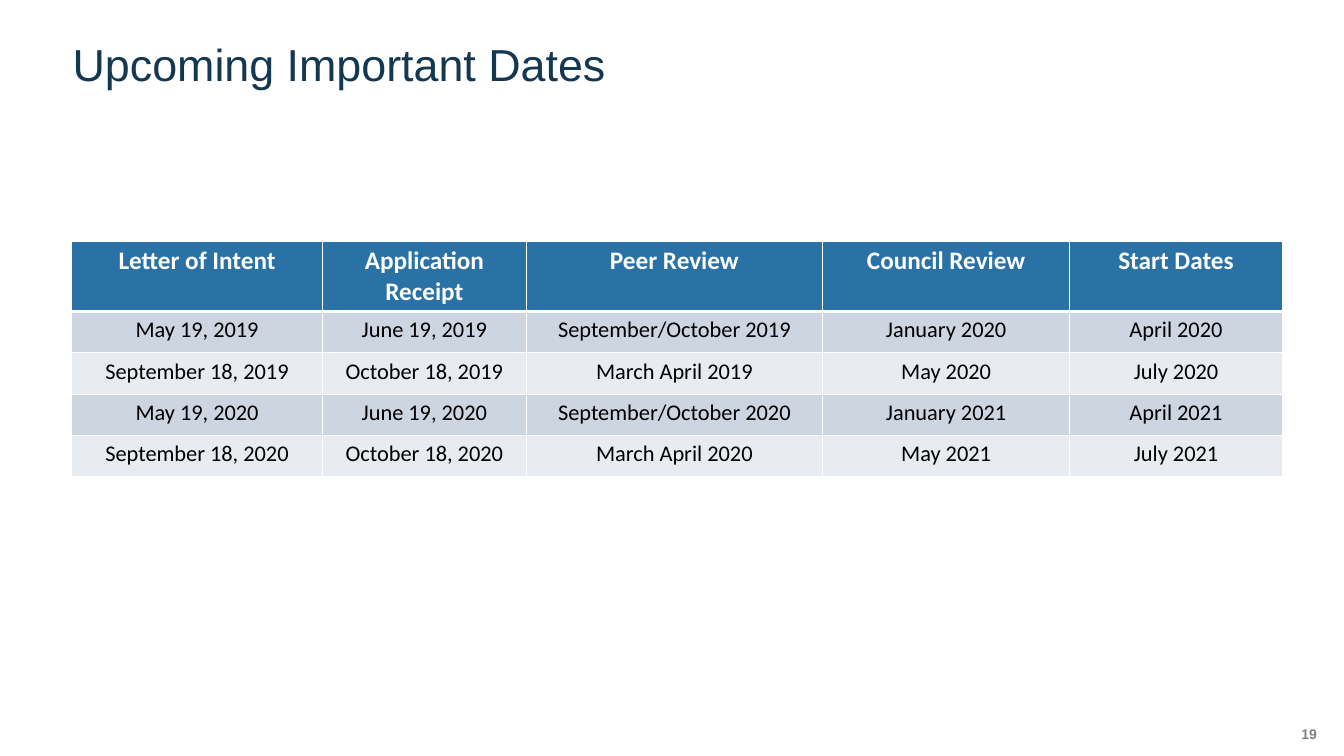
import pptx
import pptx.util
import pptx.dml.color
import pptx.enum.text
import pptx.oxml.ns
import lxml.etree

Inch = pptx.util.Inches
Align = pptx.enum.text.PP_ALIGN
Anchor = pptx.enum.text.MSO_ANCHOR


def color(code):
    return pptx.dml.color.RGBColor.from_string(code)


def write(frame, words, size, face, code, bold=False, align=Align.LEFT):
    para = frame.paragraphs[0]
    para.alignment = align
    run = para.add_run()
    run.text = words
    run.font.size = pptx.util.Pt(size)
    run.font.name = face
    run.font.bold = bold
    run.font.color.rgb = color(code)
    return para


deck = pptx.Presentation()
deck.slide_width, deck.slide_height = Inch(13.33), Inch(7.5)
slide = deck.slides.add_slide(deck.slide_layouts[6])

# Title and page number
labels = [
    ((0.72, 0.45, 11.91, 0.46), "Upcoming Important Dates", 32, "153852", False, Align.LEFT, Anchor.BOTTOM, 0.9),
    ((12.61, 7.2, 0.45, 0.2), "19", 10, "7F7F7F", True, Align.RIGHT, Anchor.TOP, 1.01),
]
for place, words, size, code, bold, align, anchor, lead in labels:
    frame = slide.shapes.add_textbox(*map(Inch, place)).text_frame
    frame.word_wrap = True
    frame.vertical_anchor = anchor
    frame.margin_left = frame.margin_right = 0
    frame.margin_top = frame.margin_bottom = 0
    para = write(frame, words, size, "Arial", code, bold, align)
    para.line_spacing = lead

# Dates, one row per review cycle
dates = [
    ["Letter of Intent", "Application Receipt", "Peer Review", "Council Review", "Start Dates"],
    ["May 19, 2019", "June 19, 2019", "September/October 2019", "January 2020", "April 2020"],
    ["September 18, 2019", "October 18, 2019", "March April 2019", "May 2020", "July 2020"],
    ["May 19, 2020", "June 19, 2020", "September/October 2020", "January 2021", "April 2021"],
    ["September 18, 2020", "October 18, 2020", "March April 2020", "May 2021", "July 2021"],
]
widths = [2.49, 2.02, 2.94, 2.45, 2.11]
high = 2.32
holder = slide.shapes.add_table(
    len(dates), len(widths), Inch(0.71), Inch(2.39), Inch(sum(widths)), Inch(high))
table = holder.table
for col, width in zip(table.columns, widths):
    col.width = Inch(width)
for row in table.rows:
    row.height = Inch(0.41)
holder.height = Inch(high)  # the header wraps to two lines

# Cells: white rules, dark header, striped body
qn = pptx.oxml.ns.qn
for r, line in enumerate(dates):
    head = r == 0
    shade = "2A71A5" if head else ("E8EBF0", "CDD5E1")[r % 2]
    for c, words in enumerate(line):
        cell = table.cell(r, c)
        props = cell._tc.get_or_add_tcPr()
        for side in "LRTB":
            thick = (side == "B" and r == 0) or (side == "T" and r == 1)
            rule = lxml.etree.SubElement(
                props, qn("a:ln" + side), w=str(pptx.util.Pt(3 if thick else 1)))
            paint = lxml.etree.SubElement(rule, qn("a:solidFill"))
            lxml.etree.SubElement(paint, qn("a:srgbClr"), val="FFFFFF")
        cell.fill.solid()
        cell.fill.fore_color.rgb = color(shade)
        write(cell.text_frame, words, 18 if head else 16, "Calibri",
              "FFFFFF" if head else "000000", head, Align.CENTER)

deck.save("out.pptx")
